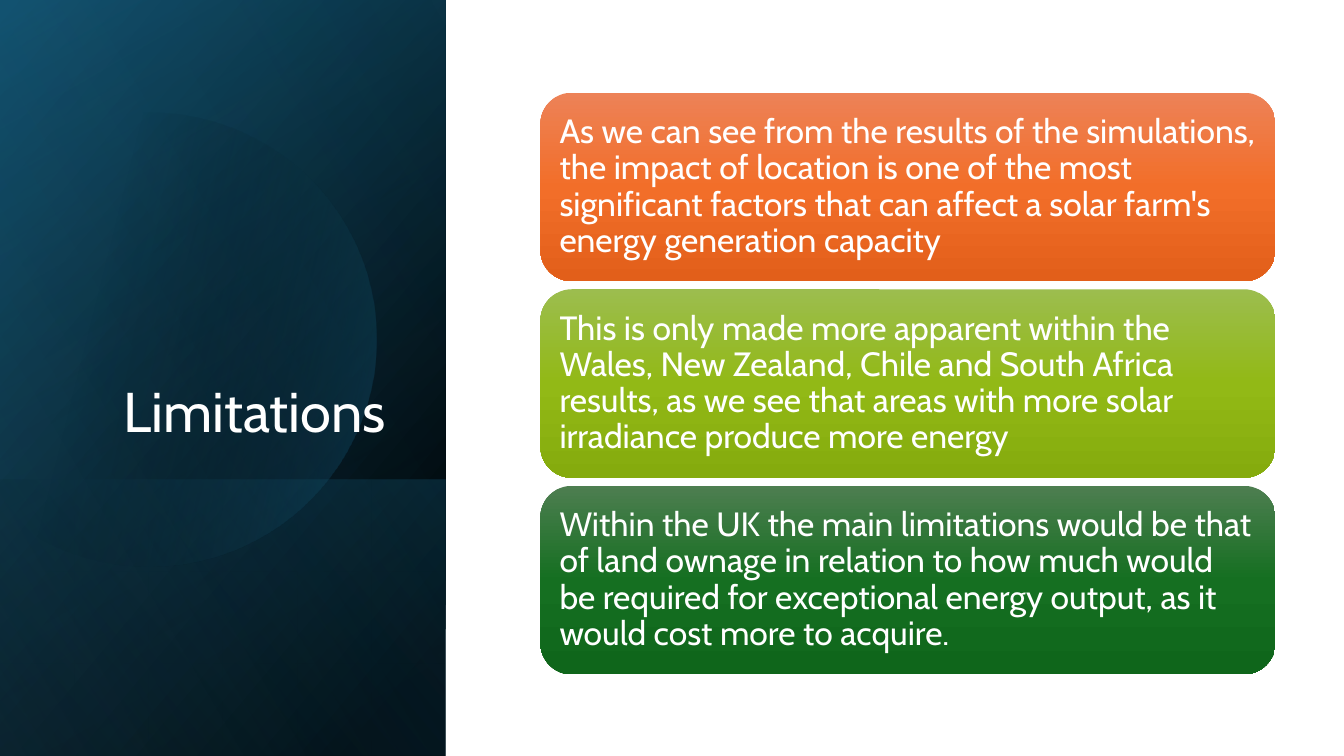
from math import acos, cos, radians, sin, degrees

from lxml.etree import SubElement
from pptx import Presentation
from pptx.enum.shapes import MSO_SHAPE
from pptx.enum.text import MSO_ANCHOR, PP_ALIGN
from pptx.dml.color import RGBColor
from pptx.oxml.ns import qn
from pptx.util import Inches, Pt

# Content
TITLE = "Limitations "
CARDS = [
    ("As we can see from the results of the simulations, the impact of location "
     "is one of the most significant factors that can affect a solar farm's "
     "energy generation capacity", "orange"),
    ("This is only made more apparent within the Wales, New Zealand, Chile and "
     "South Africa results, as we see that areas with more solar irradiance "
     "produce more energy", "lime"),
    ("Within the UK the main limitations would be that of land ownage in relation "
     "to how much would be required for exceptional energy output, as it would "
     "cost more to acquire.", "green"),
]
FONT = "Cabin"
COLORS = {
    "white": "FFFFFF", "black": "000000", "navy": "104862",
    "teal": "156082", "sky": "46B1E1",
    "orange": ("ED8257", "F26E29", "E25F1A"),
    "lime": ("9CBD4E", "92B916", "85AB0D"),
    "green": ("4D7E50", "156F21", "0F661B"),
}

# Side panel layers: top, angle, stops of (position, colour, opacity)
WIDE, HIGH = 4.42, 7.5
BASE = [
    (0, 220, [(8, "black", 100), (100, "navy", 100)]),
    (0, 240, [(0, "black", 0), (99, "teal", 46)]),
    (4.76, 140, [(2, "teal", 29), (100, "black", 30)]),
]
GLOW = (14, [(29, "black", 0), (100, "teal", 43)])
SHEEN = (0, 150, [(0, "black", 0), (99, "sky", 11)])
DISC = (1.48, 3.37, 2.25)  # centre x, centre y, radius


def shade(shape, angle, stops):
    """Give a shape a linear gradient, with no line and no shadow."""
    shape.shadow.inherit = False
    shape.line.fill.background()
    shape.fill.gradient()
    grad = shape.fill._fill._gradFill
    for child in list(grad):
        grad.remove(child)
    items = SubElement(grad, qn("a:gsLst"))
    for pos, color, alpha in stops:
        stop = SubElement(items, qn("a:gs"), pos=str(pos * 1000))
        tone = SubElement(stop, qn("a:srgbClr"), val=color)
        if alpha < 100:
            SubElement(tone, qn("a:alpha"), val=str(alpha * 1000))
    SubElement(grad, qn("a:lin"), ang=str(angle * 60000), scaled="0")


def named(stops):
    return [(pos, COLORS[name], alpha) for pos, name, alpha in stops]


def panel(shapes, top, angle, stops):
    rect = shapes.add_shape(MSO_SHAPE.RECTANGLE, 0, Inches(top),
                            Inches(WIDE), Inches(HIGH - top))
    shade(rect, angle, named(stops))


def write(frame, text, size, align):
    para = frame.paragraphs[0]
    para.alignment = align
    para.line_spacing = 0.9
    run = para.add_run()
    run.text = text
    run.font.name = FONT
    run.font.size = Pt(size)
    run.font.color.rgb = RGBColor.from_string(COLORS["white"])


def main():
    prs = Presentation()
    prs.slide_width, prs.slide_height = Inches(13.33), Inches(7.5)
    slide = prs.slides.add_slide(prs.slide_layouts[5])
    shapes = slide.shapes

    # Dark side panel
    for layer in BASE:
        panel(shapes, *layer)

    # Disc, cut off at the slide's left edge
    mid, down, rad = DISC
    end = degrees(acos(-mid / rad))
    turns = [radians(-end + 2 * end * i / 120) for i in range(121)]
    dots = [(Inches(max(0, mid + rad * cos(t))), Inches(down + rad * sin(t)))
            for t in turns]
    pen = shapes.build_freeform(*dots[0])
    pen.add_line_segments(dots[1:], close=True)
    angle, stops = GLOW
    shade(pen.convert_to_shape(), angle, named(stops))
    panel(shapes, *SHEEN)

    # Title, brought in front of the panel
    title = shapes.title
    title.left, title.top = Inches(0.64), Inches(1.84)
    title.width, title.height = Inches(3.41), Inches(2.62)
    title.text_frame.vertical_anchor = MSO_ANCHOR.BOTTOM
    title.text_frame.word_wrap = True
    write(title.text_frame, TITLE, 40, PP_ALIGN.RIGHT)
    title._element.getparent().append(title._element)

    # Cards
    left, top, width, height, step = 5.36, 0.92, 7.29, 1.87, 1.95
    for i, (text, hue) in enumerate(CARDS):
        card = shapes.add_shape(MSO_SHAPE.ROUNDED_RECTANGLE, Inches(left),
                                Inches(top + i * step), Inches(width), Inches(height))
        shade(card, 90, [(n * 50, c, 100) for n, c in enumerate(COLORS[hue])])
        frame = card.text_frame
        frame.word_wrap = True
        frame.vertical_anchor = MSO_ANCHOR.MIDDLE
        frame.margin_left = frame.margin_right = Inches(0.1)
        frame.margin_top = frame.margin_bottom = Inches(0.1)
        write(frame, text, 24, PP_ALIGN.LEFT)

    prs.save("out.pptx")


if __name__ == "__main__":
    main()
